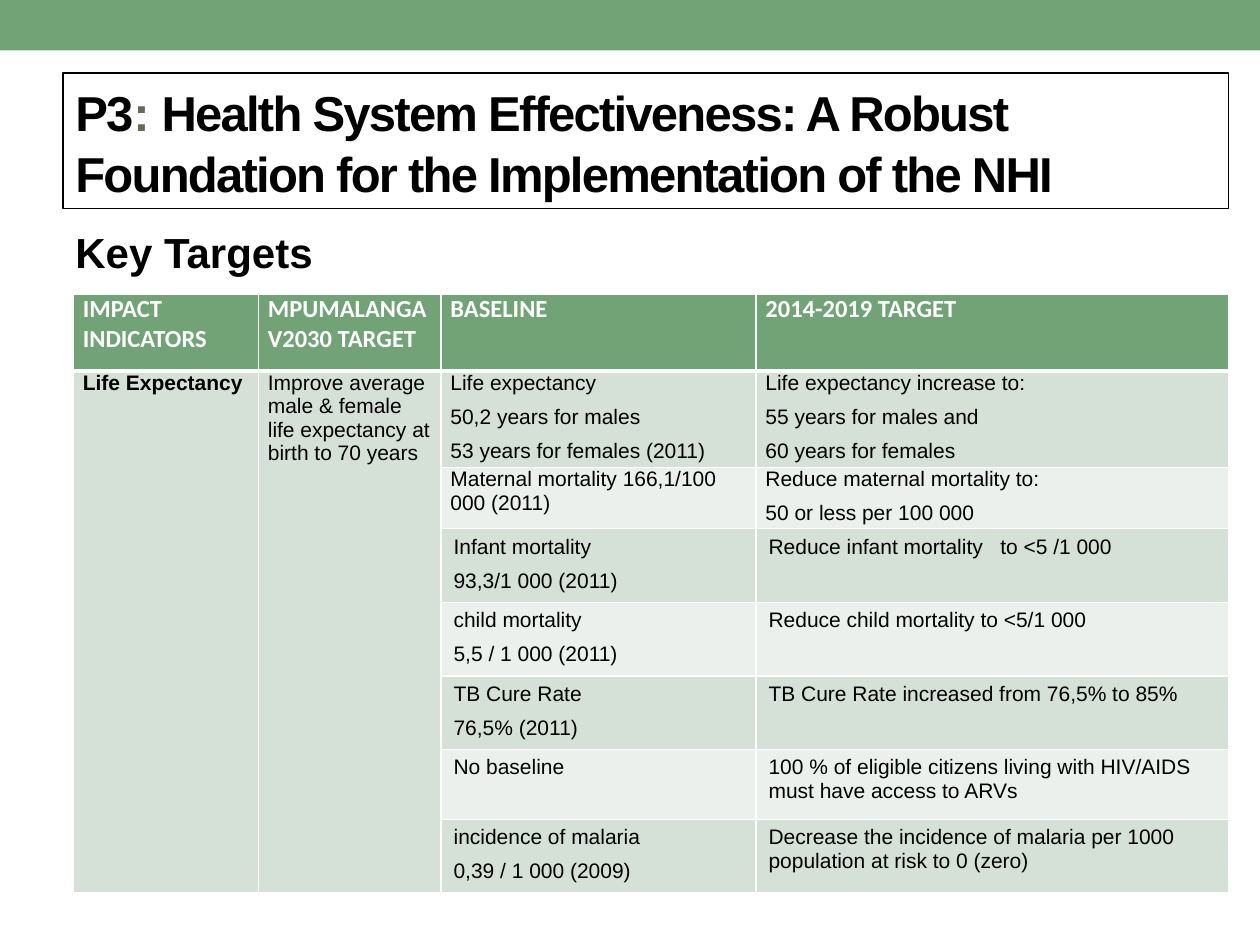
from dataclasses import dataclass

from lxml.etree import SubElement
from pptx import Presentation
from pptx.dml.color import RGBColor
from pptx.enum.shapes import MSO_SHAPE
from pptx.enum.text import MSO_ANCHOR, PP_ALIGN
from pptx.oxml.ns import qn
from pptx.util import Cm, Pt

COLOURS = {
    "green": "72A376",
    "band_dark": "D5E0D6",
    "band_light": "EBF0EC",
    "olive": "676A55",
    "black": "000000",
    "white": "FFFFFF",
}


@dataclass
class Style:
    size: float
    colour: str = "black"
    bold: bool = False
    font: str = "Arial"
    tracking: int = 0


@dataclass
class TargetRow:
    height: float
    baseline: list[str]
    target: list[str]
    tight: bool = False


TITLE = Style(28, bold=True, tracking=-100)
TITLE_COLON = Style(28, "olive", bold=True, tracking=-100)
SUBTITLE = Style(24, bold=True)
HEADER = Style(14, "white", bold=True, font="Calibri")
BODY = Style(12)
BODY_BOLD = Style(12, bold=True)

COLUMN_WIDTHS = [3.73, 3.68, 6.35, 9.53]
HEADER_HEIGHT = 1.55
HEADINGS = ["IMPACT INDICATORS", "MPUMALANGA V2030 TARGET", "BASELINE", "2014-2019 TARGET"]
ROWS = [
    TargetRow(1.8, ["Life expectancy", "50,2 years for males", "53 years for females (2011)"],
              ["Life expectancy increase to:", "55 years for males and", "60 years for females"], True),
    TargetRow(1.16, ["Maternal mortality 166,1/100 000 (2011)"],
              ["Reduce maternal mortality to:", "50 or less per 100 000"], True),
    TargetRow(1.41, ["Infant mortality", "93,3/1 000 (2011)"],
              ["Reduce infant mortality   to <5 /1 000"]),
    TargetRow(1.41, ["child mortality", "5,5 / 1 000 (2011)"],
              ["Reduce child mortality to <5/1 000"]),
    TargetRow(1.41, ["TB Cure Rate", "76,5% (2011)"],
              ["TB Cure Rate increased from 76,5% to 85%"]),
    TargetRow(1.41, ["No baseline"],
              ["100 % of eligible citizens living with HIV/AIDS must have access to ARVs"]),
    TargetRow(1.41, ["incidence of malaria", "0,39 / 1 000 (2009)"],
              ["Decrease the incidence of malaria per 1000 population at risk to 0 (zero)"]),
]


def colour(name: str) -> RGBColor:
    return RGBColor.from_string(COLOURS[name])


def add_span(para, text: str, style: Style) -> None:
    span = para.add_run()
    span.text = text
    span.font.size = Pt(style.size)
    span.font.bold = style.bold
    span.font.name = style.font
    span.font.color.rgb = colour(style.colour)
    if style.tracking:
        span.font._element.set("spc", str(style.tracking))


def set_borders(cell, top: float = 1, bottom: float = 1) -> None:
    properties = cell._tc.get_or_add_tcPr()
    widths = {"a:lnL": 1, "a:lnR": 1, "a:lnT": top, "a:lnB": bottom}
    for position, (tag, width) in enumerate(widths.items()):
        line = SubElement(properties, qn(tag), w=str(Pt(width)))
        fill = SubElement(line, qn("a:solidFill"))
        SubElement(fill, qn("a:srgbClr"), val=COLOURS["white"])
        properties.insert(position, line)


def fill_cell(cell, lines: list[str], style: Style, fill: str, gap: float, tight: bool = True) -> None:
    cell.fill.solid()
    cell.fill.fore_color.rgb = colour(fill)
    if tight:
        cell.margin_left = cell.margin_right = Cm(0.19)
        cell.margin_top = cell.margin_bottom = Cm(0)
    frame = cell.text_frame
    for index, text in enumerate(lines):
        para = frame.add_paragraph() if index else frame.paragraphs[0]
        para.space_before = para.space_after = Pt(gap)
        add_span(para, text, style)


def add_top_bar(page) -> None:
    bar = page.shapes.add_shape(MSO_SHAPE.RECTANGLE, Cm(0), Cm(0), Cm(25.4), Cm(1.02))
    bar.shadow.inherit = False
    bar.fill.solid()
    bar.fill.fore_color.rgb = colour("green")
    bar.line.fill.background()


def add_title(page) -> None:
    box = page.shapes.add_shape(MSO_SHAPE.RECTANGLE, Cm(1.27), Cm(1.47), Cm(23.5), Cm(2.74))
    box.shadow.inherit = False
    box.fill.background()
    box.line.color.rgb = colour("black")
    box.line.width = Pt(0.75)
    box.text_frame.word_wrap = True
    box.text_frame.vertical_anchor = MSO_ANCHOR.MIDDLE
    para = box.text_frame.paragraphs[0]
    para.alignment = PP_ALIGN.LEFT
    para.line_spacing = 1.05
    add_span(para, "P3", TITLE)
    add_span(para, ": ", TITLE_COLON)
    add_span(para, "Health System Effectiveness: A Robust Foundation for the Implementation of the NHI", TITLE)


def add_subtitle(page) -> None:
    box = page.shapes.add_textbox(Cm(1.27), Cm(4.45), Cm(23.7), Cm(13.54))
    box.text_frame.word_wrap = True
    para = box.text_frame.paragraphs[0]
    para.space_before = Pt(4.8)
    add_span(para, "Key Targets", SUBTITLE)


def add_targets_table(page) -> None:
    heights = [HEADER_HEIGHT] + [row.height for row in ROWS]
    table = page.shapes.add_table(
        len(heights), len(COLUMN_WIDTHS), Cm(1.48), Cm(5.93),
        Cm(sum(COLUMN_WIDTHS)), Cm(sum(heights))).table
    for column, width in zip(table.columns, COLUMN_WIDTHS):
        column.width = Cm(width)
    for line, height in zip(table.rows, heights):
        line.height = Cm(height)

    # Header row
    for index, heading in enumerate(HEADINGS):
        fill_cell(table.cell(0, index), [heading], HEADER, "green", 6)

    # Indicator and long-term target, each spanning every body row
    spanning = [("Life Expectancy", BODY_BOLD),
                ("Improve average male & female life expectancy at birth to 70 years", BODY)]
    for index, (text, style) in enumerate(spanning):
        table.cell(1, index).merge(table.cell(len(ROWS), index))
        fill_cell(table.cell(1, index), [text], style, "band_dark", 3)

    # Baselines and targets in alternating bands
    for number, row in enumerate(ROWS, start=1):
        band = "band_dark" if number % 2 else "band_light"
        for index, lines in ((2, row.baseline), (3, row.target)):
            fill_cell(table.cell(number, index), lines, BODY, band, 3, row.tight)

    # White rules, heavier under the header
    for number in range(len(heights)):
        for index in range(len(COLUMN_WIDTHS)):
            set_borders(table.cell(number, index),
                        top=3 if number == 1 else 1, bottom=3 if number == 0 else 1)


def main() -> None:
    deck = Presentation()
    deck.slide_width, deck.slide_height = Cm(25.4), Cm(19.05)
    page = deck.slides.add_slide(deck.slide_layouts[6])
    add_top_bar(page)
    add_subtitle(page)
    add_targets_table(page)
    add_title(page)
    deck.save("out.pptx")


if __name__ == "__main__":
    main()
